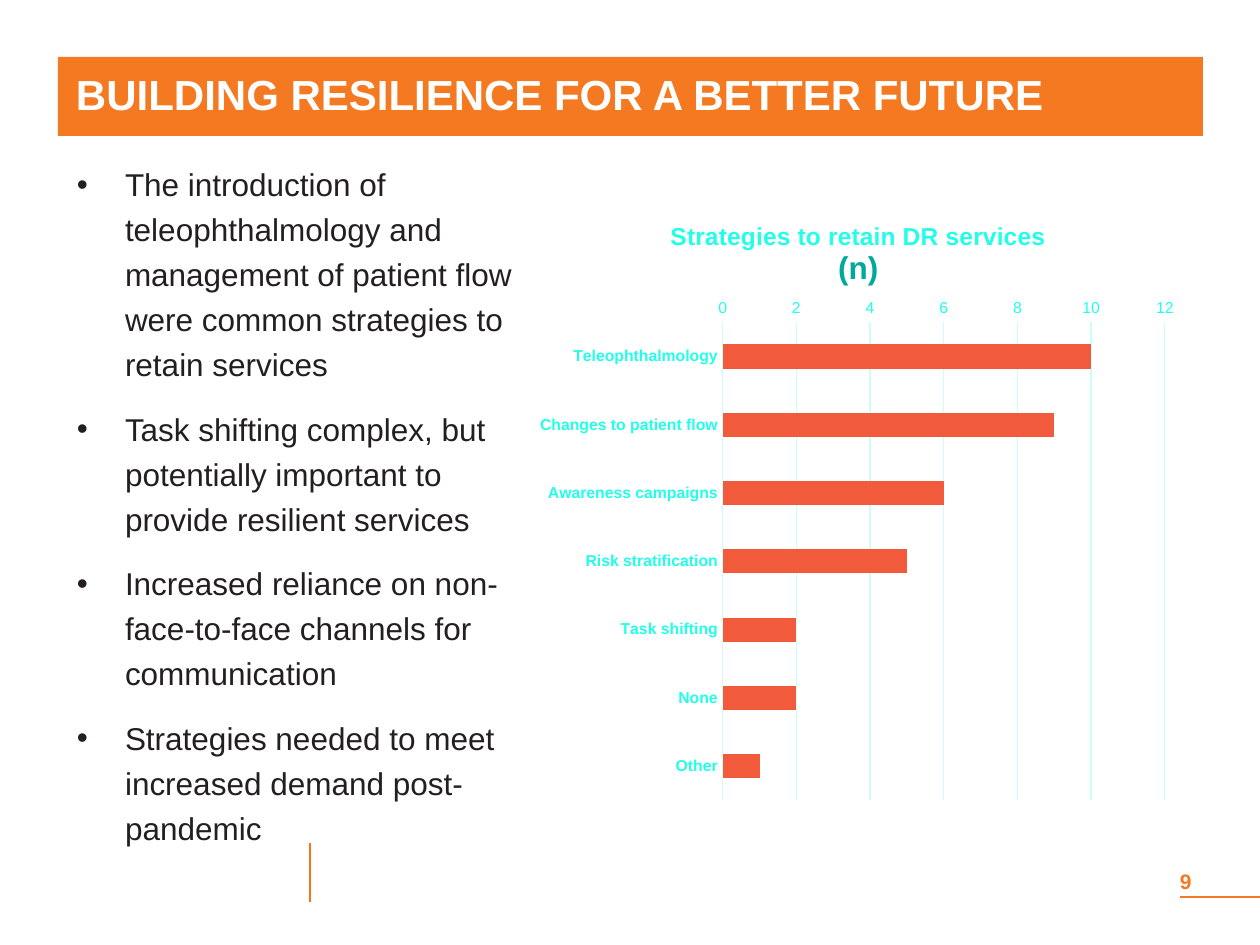
from typing import Any, NamedTuple

import pptx
import pptx.chart.data
import pptx.dml.color
import pptx.enum.chart
import pptx.enum.shapes
import pptx.enum.text
import pptx.oxml
import pptx.oxml.ns
import pptx.util

RGB = pptx.dml.color.RGBColor
ORANGE = RGB(0xF4, 0x79, 0x20)
RUST = RGB(0xF4, 0x76, 0x1A)
WHITE = RGB(0xFF, 0xFF, 0xFF)
INK = RGB(0x23, 0x1F, 0x20)
TEAL = RGB(0x00, 0xA9, 0x98)
AQUA = RGB(0x21, 0xFF, 0xE9)
PALE = RGB(0xCC, 0xFF, 0xFA)
CORAL = RGB(0xF1, 0x5B, 0x3B)

FACE = "Arial"
SCALE = 914400 / 126
Pt = pptx.util.Pt
Text = pptx.enum.text
Chart = pptx.enum.chart
qn = pptx.oxml.ns.qn


class Box(NamedTuple):
    left: int
    top: int
    width: int
    height: int


class Rule(NamedTuple):
    start: tuple[int, int]
    end: tuple[int, int]
    color: RGB
    weight: float


class Font(NamedTuple):
    size: float
    color: RGB
    bold: bool = False


RULES = [
    Rule((1180, 897), (1260, 897), ORANGE, 1.5),
    Rule((310, 843), (310, 902), RUST, 1),
]
POINTS = [
    "The introduction of teleophthalmology and management of patient flow "
    "were common strategies to retain services",
    "Task shifting complex, but potentially important to provide resilient services",
    "Increased reliance on non-face-to-face channels for communication",
    "Strategies needed to meet increased demand post-pandemic",
]
COUNTS = {
    "Teleophthalmology": 10,
    "Changes to patient flow": 9,
    "Awareness campaigns": 6,
    "Risk stratification": 5,
    "Task shifting": 2,
    "None": 2,
    "Other": 1,
}
HEADING = [
    ("Strategies to retain DR services", Font(14, AQUA, True)),
    ("(n)", Font(18, TEAL, True)),
]


def px(count: int) -> int:
    return round(count * SCALE)


def apply(target: Any, values: dict[str, Any]) -> None:
    for name, value in values.items():
        setattr(target, name, value)


def style(font: Any, look: Font) -> None:
    apply(font, {"name": FACE, "size": Pt(look.size), "bold": look.bold})
    font.color.rgb = look.color


def place(shape: Any, box: Box) -> None:
    apply(shape, {name: px(value) for name, value in box._asdict().items()})


def frame(shape: Any, inset: int = 0) -> Any:
    """Set wrapping, anchor and margins, and return the text frame."""
    text = shape.text_frame
    apply(text, {
        "auto_size": Text.MSO_AUTO_SIZE.NONE, "word_wrap": True,
        "vertical_anchor": Text.MSO_ANCHOR.MIDDLE,
        "margin_left": px(inset), "margin_right": 0,
        "margin_top": 0, "margin_bottom": 0,
    })
    return text


def label(shape: Any, words: str, look: Font, pitch: float, inset: int = 0) -> None:
    text = frame(shape, inset)
    text.text = words
    para = text.paragraphs[0]
    apply(para, {"alignment": Text.PP_ALIGN.LEFT, "line_spacing": Pt(pitch)})
    style(para.runs[0].font, look)


def bullet(para: Any, words: str) -> None:
    props = para._p.get_or_add_pPr()
    indent = px(48)
    props.set("marL", str(indent))
    props.set("indent", str(-indent))
    for tag, key, value in (("buFont", "typeface", FACE), ("buChar", "char", "•")):
        mark = pptx.oxml.parse_xml(f"<a:{tag} {pptx.oxml.ns.nsdecls('a')}/>")
        mark.set(key, value)
        props.append(mark)
    apply(para, {
        "alignment": Text.PP_ALIGN.LEFT, "line_spacing": 1.19,
        "space_before": Pt(0), "space_after": Pt(11.3),
    })
    run = para.add_run()
    run.text = words
    style(run.font, Font(18, INK))


def draw_rule(slide: Any, rule: Rule) -> None:
    ends = [px(value) for value in rule.start + rule.end]
    line = slide.shapes.add_connector(pptx.enum.shapes.MSO_CONNECTOR.STRAIGHT, *ends)
    line.line.color.rgb = rule.color
    line.line.width = Pt(rule.weight)
    line.element.spPr.append(
        pptx.oxml.parse_xml(f"<a:effectLst {pptx.oxml.ns.nsdecls('a')}/>"))


def lay_out(host: Any, slot: int, values: dict[str, Any]) -> None:
    """Give a chart part a manual layout, as fractions of the chart."""
    old = host.find(qn("c:layout"))
    if old is not None:
        host.remove(old)
    items = "".join(f'<c:{key} val="{value}"/>' for key, value in values.items())
    host.insert(slot, pptx.oxml.parse_xml(
        f"<c:layout {pptx.oxml.ns.nsdecls('c')}>"
        f"<c:manualLayout>{items}</c:manualLayout></c:layout>"))


def draw_chart(slide: Any, box: Box) -> None:
    data = pptx.chart.data.CategoryChartData()
    data.categories = list(COUNTS)
    data.add_series("Series 1", list(COUNTS.values()))
    chart = slide.shapes.add_chart(
        Chart.XL_CHART_TYPE.BAR_CLUSTERED, *map(px, box), data).chart
    chart.has_legend = False
    style(chart.font, Font(10, TEAL))

    title = chart.chart_title.text_frame
    for order, (words, look) in enumerate(HEADING):
        para = title.add_paragraph() if order else title.paragraphs[0]
        run = para.add_run()
        run.text = words
        style(run.font, look)

    plot = chart.plots[0]
    apply(plot, {"gap_width": 182, "vary_by_categories": False})
    fill = plot.series[0].format.fill
    fill.solid()
    fill.fore_color.rgb = CORAL

    groups, values = chart.category_axis, chart.value_axis
    for axis, bold in ((groups, True), (values, False)):
        axis.major_tick_mark = axis.minor_tick_mark = Chart.XL_TICK_MARK.NONE
        style(axis.tick_labels.font, Font(9, AQUA, bold))
    groups.reverse_order = True
    apply(values, {"minimum_scale": 0, "maximum_scale": 12, "major_unit": 2,
                   "has_major_gridlines": True})
    values.format.line.fill.background()
    for line in (groups.format.line, values.major_gridlines.format.line):
        line.color.rgb = PALE
        line.width = Pt(0.75)

    modes = {"xMode": "edge", "yMode": "edge"}
    lay_out(chart.element.find(".//" + qn("c:title")), 1, modes | {"x": 0.21, "y": 0.04})
    lay_out(chart.element.find(".//" + qn("c:plotArea")), 0,
            {"layoutTarget": "inner"} | modes
            | {"x": 0.295, "y": 0.21, "w": 0.67, "h": 0.77})


def main() -> None:
    deck = pptx.Presentation()
    apply(deck, {"slide_width": px(1260), "slide_height": px(945)})
    slide = deck.slides.add_slide(deck.slide_layouts[1])

    for rule in RULES:
        draw_rule(slide, rule)

    title = slide.shapes.title
    place(title, Box(58, 57, 1145, 79))
    title.fill.solid()
    title.fill.fore_color.rgb = ORANGE
    label(title, "BUILDING RESILIENCE FOR A BETTER FUTURE", Font(24, WHITE, True), 26, 18)

    body = slide.placeholders[1]
    place(body, Box(77, 192, 451, 621))
    text = frame(body)
    for order, words in enumerate(POINTS):
        bullet(text.add_paragraph() if order else text.paragraphs[0], words)

    number = slide.shapes.add_textbox(*map(px, Box(1180, 866, 80, 30)))
    label(number, "9", Font(12, ORANGE, True), 14.4)
    draw_chart(slide, Box(528, 192, 660, 621))
    deck.save("out.pptx")


if __name__ == "__main__":
    main()
